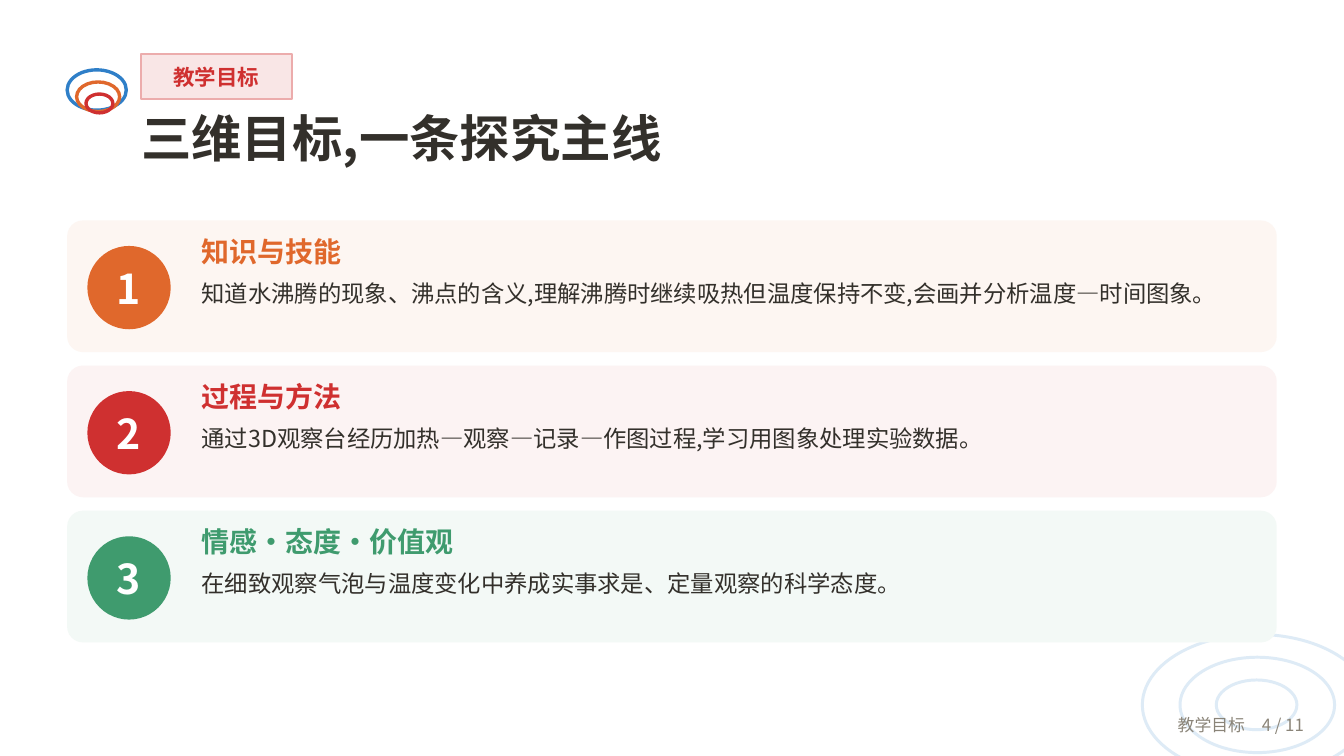
import dataclasses

import pptx
import pptx.dml.color
import pptx.enum.shapes
import pptx.enum.text
import pptx.oxml
import pptx.oxml.ns
import pptx.util

RGBColor = pptx.dml.color.RGBColor
MSO_SHAPE = pptx.enum.shapes.MSO_SHAPE
PP_ALIGN = pptx.enum.text.PP_ALIGN
MSO_ANCHOR = pptx.enum.text.MSO_ANCHOR

EMU_PER_PX = 9144  # 100 px to the inch
FONT = "Noto Sans CJK SC"

WHITE = RGBColor(0xFF, 0xFF, 0xFF)
INK = RGBColor(0x33, 0x30, 0x2B)
GREY = RGBColor(0x8A, 0x84, 0x78)
BLUE = RGBColor(0x2F, 0x7F, 0xC8)
PALE_BLUE = RGBColor(0xDE, 0xEB, 0xF6)
ORANGE = RGBColor(0xE0, 0x68, 0x2C)
PALE_ORANGE = RGBColor(0xFD, 0xF6, 0xF2)
RED = RGBColor(0xCF, 0x30, 0x30)
PALE_RED = RGBColor(0xFC, 0xF3, 0xF3)
TAG_FILL = RGBColor(0xF9, 0xE6, 0xE6)
TAG_LINE = RGBColor(0xEC, 0xAC, 0xAC)
GREEN = RGBColor(0x3F, 0x9B, 0x6E)
PALE_GREEN = RGBColor(0xF3, 0xF9, 0xF6)

CARD_TOP, CARD_HEIGHT, CARD_PITCH = 164, 98, 108


@dataclasses.dataclass
class Box:
    x: int
    y: int
    w: int
    h: int

    def emu(self) -> list[int]:
        return [v * EMU_PER_PX for v in (self.x, self.y, self.w, self.h)]


@dataclasses.dataclass
class Ring:
    box: Box
    color: RGBColor
    width: float


@dataclasses.dataclass
class Goal:
    heading: str
    detail: str
    color: RGBColor
    tint: RGBColor


RINGS = [
    # Corner ripples
    Ring(Box(850, 472, 170, 105), PALE_BLUE, 1.6),
    Ring(Box(878, 489, 115, 71), PALE_BLUE, 1.6),
    Ring(Box(905, 506, 60, 37), PALE_BLUE, 1.6),
    # Ripples beside the title
    Ring(Box(50, 52, 44, 30), BLUE, 1.8),
    Ring(Box(57, 61, 32, 22), ORANGE, 1.8),
    Ring(Box(64, 70, 20, 14), RED, 1.8),
]

GOALS = [
    Goal("知识与技能",
         "知道水沸腾的现象、沸点的含义,理解沸腾时继续吸热但温度保持不变,会画并分析温度—时间图象。",
         ORANGE, PALE_ORANGE),
    Goal("过程与方法",
         "通过3D观察台经历加热—观察—记录—作图过程,学习用图象处理实验数据。",
         RED, PALE_RED),
    Goal("情感·态度·价值观",
         "在细致观察气泡与温度变化中养成实事求是、定量观察的科学态度。",
         GREEN, PALE_GREEN),
]


def add_shape(slide, kind, box: Box, fill: RGBColor | None = None,
              line: RGBColor | None = None, width: float = 1):
    sp = slide.shapes.add_shape(kind, *box.emu())
    sp.shadow.inherit = False
    if fill is None:
        sp.fill.background()
    else:
        sp.fill.solid()
        sp.fill.fore_color.rgb = fill
    if line is None:
        sp.line.fill.background()
    else:
        sp.line.color.rgb = line
        sp.line.width = pptx.util.Pt(width)
    return sp


def set_frame(tf, anchor, inset: bool = False) -> None:
    tf.word_wrap = True
    tf.auto_size = pptx.enum.text.MSO_AUTO_SIZE.NONE
    tf.vertical_anchor = anchor
    if not inset:
        tf.margin_left = tf.margin_top = tf.margin_right = tf.margin_bottom = 0


def format_paragraph(p, size: float, color: RGBColor, bold: bool = False,
                     align=PP_ALIGN.LEFT) -> None:
    p.alignment = align
    for r in p.runs:
        r.font.name = FONT
        r.font.size = pptx.util.Pt(size)
        r.font.bold = bold
        r.font.color.rgb = color
        # East Asian typeface follows the Latin one
        ea = pptx.oxml.parse_xml(
            f'<a:ea {pptx.oxml.ns.nsdecls("a")} typeface="{FONT}"/>')
        r.font._element.find(pptx.oxml.ns.qn("a:latin")).addnext(ea)


def set_label(sp, text: str, size: float, color: RGBColor) -> None:
    tf = sp.text_frame
    tf.text = text
    set_frame(tf, MSO_ANCHOR.MIDDLE)
    format_paragraph(tf.paragraphs[0], size, color, True, PP_ALIGN.CENTER)


def add_goal(slide, number: int, goal: Goal) -> None:
    top = CARD_TOP + (number - 1) * CARD_PITCH
    card = add_shape(slide, MSO_SHAPE.ROUNDED_RECTANGLE,
                     Box(50, top, 900, CARD_HEIGHT), goal.tint)
    card.adjustments[0] = 0.12
    badge = add_shape(slide, MSO_SHAPE.OVAL, Box(65, top + 19, 62, 62), goal.color)
    set_label(badge, str(number), 22, WHITE)

    tf = slide.shapes.add_textbox(*Box(150, top + 6, 785, 95).emu()).text_frame
    tf.text = f"{goal.heading}\n{goal.detail}"
    set_frame(tf, MSO_ANCHOR.TOP)
    heading, detail = tf.paragraphs
    format_paragraph(heading, 15, goal.color, True)
    format_paragraph(detail, 12.5, INK)
    for p in tf.paragraphs:
        p.line_spacing = pptx.util.Pt(21)


def main() -> None:
    prs = pptx.Presentation()
    prs.slide_width = 1000 * EMU_PER_PX
    prs.slide_height = prs.slide_width * 9 // 16
    slide = prs.slides.add_slide(prs.slide_layouts[5])

    for ring in RINGS:
        add_shape(slide, MSO_SHAPE.OVAL, ring.box, line=ring.color, width=ring.width)

    # Section tag and title
    tag = add_shape(slide, MSO_SHAPE.RECTANGLE, Box(105, 40, 112, 34), TAG_FILL, TAG_LINE)
    set_label(tag, "教学目标", 11.5, RED)
    title = slide.shapes.title
    title.left, title.top, title.width, title.height = Box(105, 80, 840, 55).emu()
    title.text_frame.text = "三维目标,一条探究主线"
    set_frame(title.text_frame, MSO_ANCHOR.TOP)
    format_paragraph(title.text_frame.paragraphs[0], 27, INK, True)

    # Goal cards
    for number, goal in enumerate(GOALS, start=1):
        add_goal(slide, number, goal)

    # Footer
    tf = slide.shapes.add_textbox(*Box(800, 524, 180, 30).emu()).text_frame
    tf.text = "教学目标　4 / 11"
    set_frame(tf, MSO_ANCHOR.MIDDLE, inset=True)
    format_paragraph(tf.paragraphs[0], 9, GREY, align=PP_ALIGN.RIGHT)

    prs.save("out.pptx")


if __name__ == "__main__":
    main()
